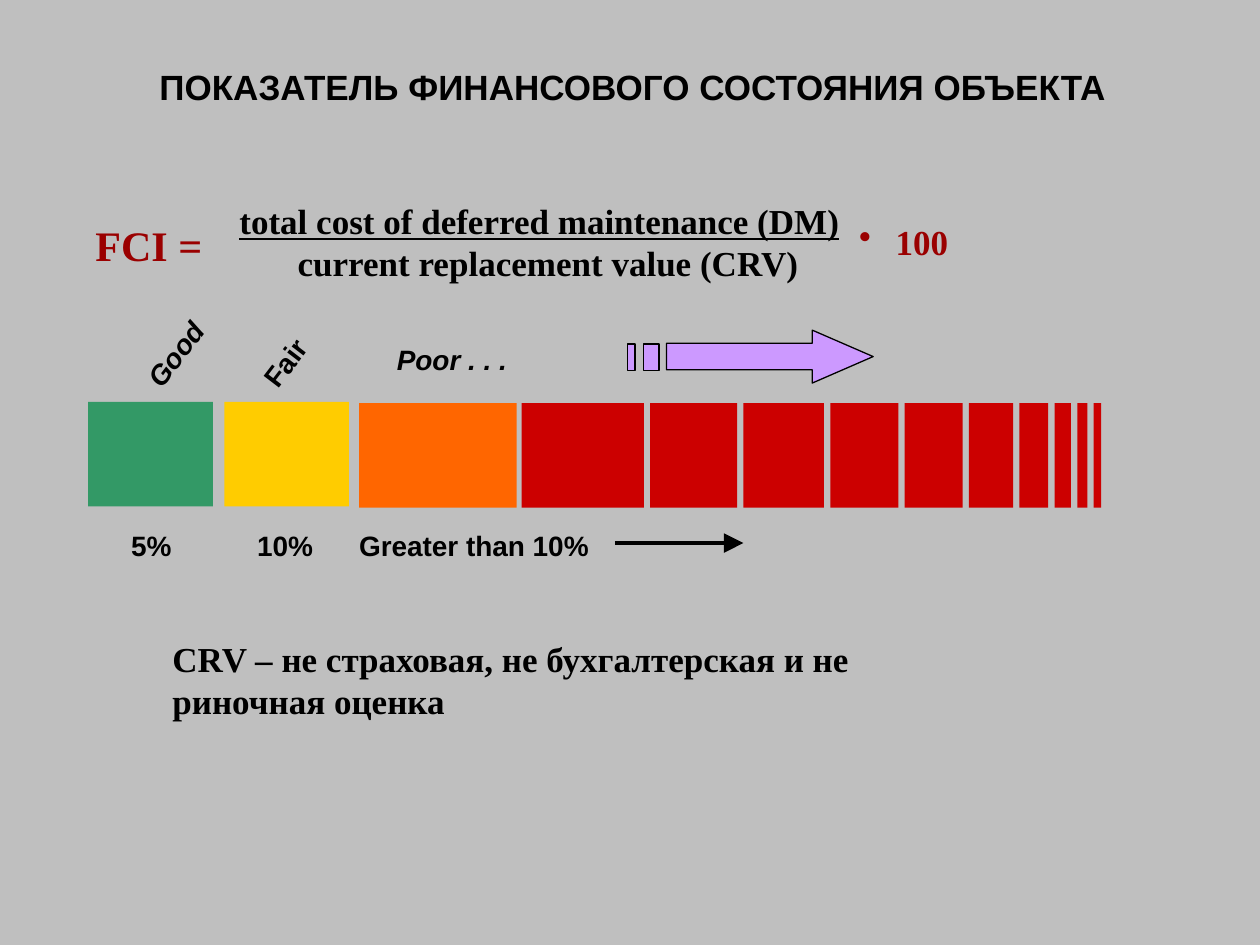
from dataclasses import dataclass

from lxml import etree
from pptx import Presentation
from pptx.dml.color import RGBColor
from pptx.enum.shapes import MSO_CONNECTOR, MSO_SHAPE
from pptx.enum.text import MSO_ANCHOR, PP_ALIGN
from pptx.oxml.ns import qn
from pptx.util import Inches, Pt

RECT, ARROW = MSO_SHAPE.RECTANGLE, MSO_SHAPE.RIGHT_ARROW
STRAIGHT = MSO_CONNECTOR.STRAIGHT
MIDDLE, TOP = MSO_ANCHOR.MIDDLE, MSO_ANCHOR.TOP
LEFT, CENTER = PP_ALIGN.LEFT, PP_ALIGN.CENTER
COLS, ROWS = 100, 75
WIDTH, HEIGHT = Inches(10), Inches(7.5)


@dataclass(frozen=True)
class Theme:
    """Colours, fonts and type sizes of the slide."""
    back: str = "BFBFBF"
    ink: str = "000000"
    accent: str = "9A0000"
    good: str = "339966"
    fair: str = "FFCC00"
    poor: str = "FF6600"
    worst: str = "CC0000"
    trend: str = "CC99FF"
    sans: str = "Arial"
    serif: str = "Times New Roman"
    label: int = 16
    body: int = 20
    large: int = 24


T = Theme()


def grid(*cells):
    """Turn alternating columns and rows into slide lengths."""
    units = (WIDTH / COLS, HEIGHT / ROWS)
    return [round(c * units[i % 2]) for i, c in enumerate(cells)]


def add_text(s, cells, lines, font=T.serif, size=T.body, color=T.ink,
             align=LEFT, anchor=TOP, insets=(0.1, 0.05, 0.1, 0.05)):
    """Add a bold text box, one paragraph per line."""
    sp = s.shapes.add_textbox(*grid(*cells))
    tf = sp.text_frame
    tf.word_wrap, tf.vertical_anchor = True, anchor
    (tf.margin_left, tf.margin_top,
     tf.margin_right, tf.margin_bottom) = map(Inches, insets)
    tf.text = "\n".join(lines)
    for p in tf.paragraphs:
        p.alignment = align
        f = p.runs[0].font
        f.name, f.size, f.bold = font, Pt(size), True
        f.color.rgb = RGBColor.from_string(color)
    return sp


def add_label(s, cells, text, italic=False, rotation=0, align=LEFT):
    """Add a scale label without margins."""
    sp = add_text(s, cells, [text], T.sans, T.label, align=align, insets=(0,) * 4)
    sp.rotation = rotation
    p = sp.text_frame.paragraphs[0]
    p.line_spacing = 1.07
    p.runs[0].font.italic = italic


def add_block(s, cells, fill, kind=RECT, outlined=False):
    """Add a flat filled shape, with a hairline if outlined."""
    sp = s.shapes.add_shape(kind, *grid(*cells))
    sp.shadow.inherit = False
    sp.fill.solid()
    sp.fill.fore_color.rgb = RGBColor.from_string(fill)
    if outlined:
        sp.line.color.rgb = RGBColor.from_string(T.ink)
        sp.line.width = Pt(0)
    else:
        sp.line.fill.background()
    return sp


def add_arrow_line(s, cells):
    """Add a straight line with a large arrowhead at its end."""
    line = s.shapes.add_connector(STRAIGHT, *grid(*cells))
    line.line.color.rgb = RGBColor.from_string(T.ink)
    line.line.width = Pt(2.25)
    etree.SubElement(line.line._get_or_add_ln(), qn("a:tailEnd"),
                     type="triangle", w="lg", len="lg")
    etree.SubElement(line._element.spPr, qn("a:effectLst"))


def add_bullet(p, indent):
    """Give a paragraph a round bullet with a hanging indent."""
    pPr = p._p.get_or_add_pPr()
    pPr.set("marL", str(indent))
    pPr.set("indent", str(-indent))
    etree.SubElement(pPr, qn("a:buChar"), char="•")


def add_formula(s):
    """Add the index formula."""
    sp = add_text(s, (17.4, 15.3, 69.1, 18.2),
                  ["total cost of deferred maintenance (DM)",
                   "current replacement value (CRV)"],
                  anchor=MIDDLE, insets=(0.16, 0.05, 1.85, 1.09))
    top, bottom = sp.text_frame.paragraphs
    top.runs[0].font.underline = True
    bottom.alignment = CENTER
    add_text(s, (6.6, 16.9, 11.3, 5), ["FCI ="], size=T.large, color=T.accent)
    sp = add_text(s, (67.2, 17, 9.7, 4.4), [" 100"], color=T.accent)
    add_bullet(sp.text_frame.paragraphs[0], Inches(0.22))


def add_scale(s):
    """Add the condition scale with blocks that narrow to the right."""
    add_block(s, (7, 31.9, 9.9, 8.3), T.good)
    add_block(s, (17.8, 31.9, 9.9, 8.3), T.fair)
    add_block(s, (28.5, 32, 12.5, 8.3), T.poor)
    col, gap = 41.4, 0.5
    for width in (9.7, 6.9, 6.4, 5.4, 4.6, 3.5, 2.3, 1.3, 0.8, 0.6):
        add_block(s, (col, 32, width, 8.3), T.worst)
        col += width + gap


def add_scale_labels(s):
    """Add grades above the scale and percentages below it."""
    add_label(s, (10.2, 26.5, 7.6, 3.3), "Good", True, 307.4, CENTER)
    add_label(s, (19.2, 27.2, 7, 3.3), "Fair", False, 307.4, CENTER)
    add_label(s, (31.5, 27, 11.7, 3.3), "Poor . . .", True)
    for col, width, text in ((10.4, 5, "5%"), (20.4, 6, "10%"),
                             (28.5, 19.5, "Greater than 10%")):
        add_label(s, (col, 41.8, width, 3.3), text)
    add_arrow_line(s, (48.8, 43.1, 59, 43.1))


def add_trend_arrow(s):
    """Add the striped arrow above the scale."""
    arrow = add_block(s, (52.9, 26.2, 16.4, 4.2), T.trend, ARROW, True)
    arrow.adjustments[0], arrow.adjustments[1] = 0.5, 1.15
    for col, width in ((51.1, 1.2), (49.8, 0.6)):
        add_block(s, (col, 27.3, width, 2.1), T.trend, outlined=True)


def main():
    """Build and save the slide."""
    prs = Presentation()
    prs.slide_width, prs.slide_height = WIDTH, HEIGHT
    s = prs.slides.add_slide(prs.slide_layouts[6])
    s.background.fill.solid()
    s.background.fill.fore_color.rgb = RGBColor.from_string(T.back)
    add_text(s, (5.2, 2.5, 90, 8.7), ["ПОКАЗАТЕЛЬ ФИНАНСОВОГО СОСТОЯНИЯ ОБЪЕКТА"],
             T.sans, align=CENTER, anchor=MIDDLE)
    add_scale(s)
    add_scale_labels(s)
    add_trend_arrow(s)
    add_formula(s)
    add_text(s, (12.7, 50.1, 66.4, 7.7),
             ["CRV – не страховая, не бухгалтерская и не риночная оценка"])
    prs.save("out.pptx")


if __name__ == "__main__":
    main()
